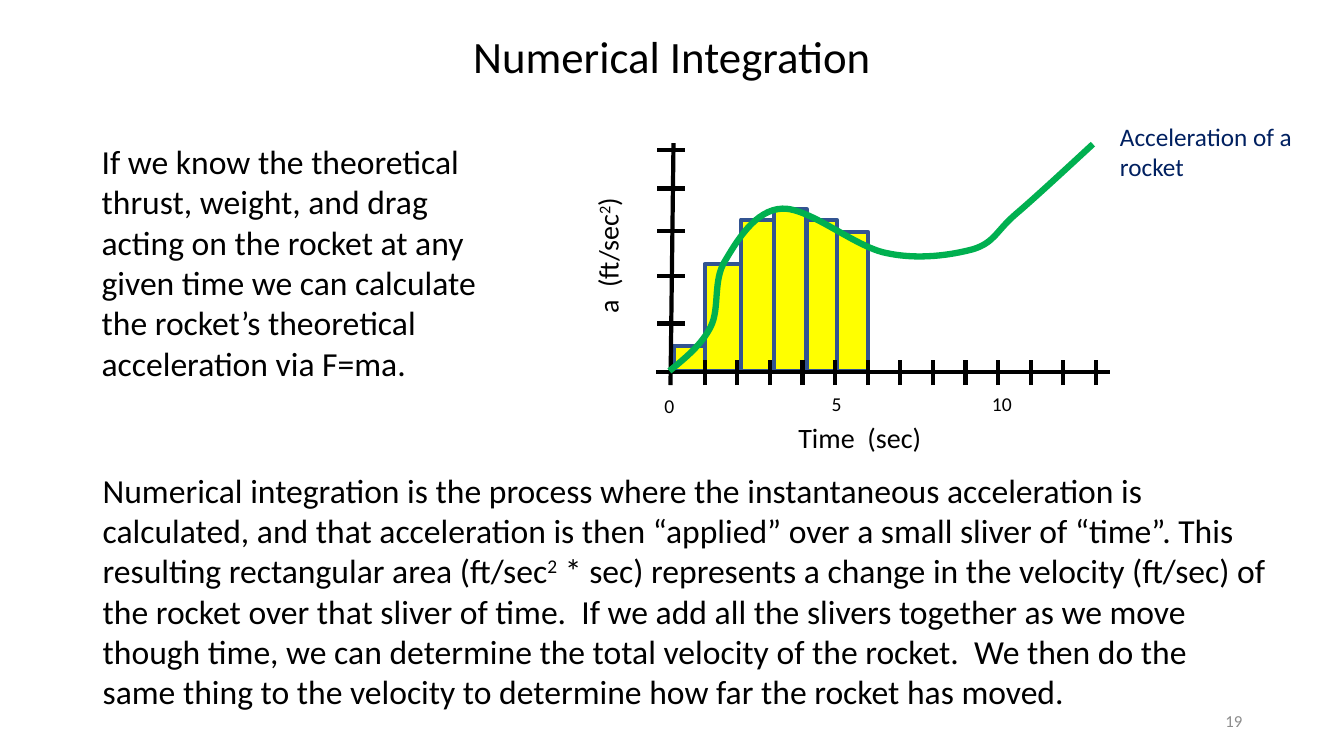
import pptx
import pptx.dml.color
import pptx.enum.shapes
import pptx.enum.text
import pptx.oxml
import pptx.oxml.ns
import pptx.util

# The slide is a fine grid of 1333 columns by 750 rows; all lengths are in cells
CELL = 9144
COLUMNS, ROWS = 1333, 750
FONT = "Calibri"
BLACK, NAVY, GREY = "000000", "002060", "8C8C8C"
YELLOW, BLUE, GREEN = "FFFF00", "325491", "00B050"

THRUST_TEXT = (
    "If we know the theoretical thrust, weight, and drag acting on the rocket "
    "at any given time we can calculate the rocket’s theoretical acceleration via F=ma."
)
BEFORE_SQUARE = (
    "Numerical integration is the process where the instantaneous acceleration is "
    "calculated, and that acceleration is then “applied” over a small sliver of “time”. "
    "This resulting rectangular area (ft/sec"
)
AFTER_SQUARE = (
    " * sec) represents a change in the velocity (ft/sec) of the rocket over that "
    "sliver of time.  If we add all the slivers together as we move though time, we can "
    "determine the total velocity of the rocket.  We then do the same thing to the "
    "velocity to determine how far the rocket has moved."
)

# Slivers: shared edges from left to right, and the top of each
SLIVER_EDGES = [668, 699, 735, 768, 800, 830, 861]
SLIVER_TOPS = [343, 262, 218, 207, 218, 230]
SLIVER_BASE = 368

# Ticks: one per second along the time axis
FIRST_SECOND, LAST_SECOND, SECONDS = 699, 1087, 13
ACCELERATION_TICKS = [149, 187, 229, 274, 321]

# Curve: a start, then two control points and an end for each part
CURVE_START = (664, 368)
CURVE_PARTS = [
    ((680, 355), (696, 342), (705, 324)),
    ((714, 306), (707, 278), (719, 259)),
    ((731, 239), (749, 208), (776, 207)),
    ((803, 206), (848, 245), (879, 251)),
    ((911, 258), (944, 253), (966, 247)),
    ((987, 240), (988, 229), (1008, 212)),
    ((1028, 195), (1071, 155), (1084, 143)),
]


def cells(*counts):
    return [pptx.util.Emu(round(count * CELL)) for count in counts]


def color(hex_value):
    return pptx.dml.color.RGBColor.from_string(hex_value)


def set_line(shape, hex_value, width):
    shape.line.color.rgb = color(hex_value)
    shape.line.width = pptx.util.Pt(width)


def write(frame, runs, size, hex_value, align=None):
    """Fill a frame with runs; a run that starts with ^ is raised."""
    frame.word_wrap = True
    paragraph = frame.paragraphs[0]
    paragraph.alignment = align
    for text in runs:
        run = paragraph.add_run()
        run.text = text.lstrip("^")
        run.font.name = FONT
        run.font.size = pptx.util.Pt(size)
        run.font.color.rgb = color(hex_value)
        if text.startswith("^"):
            run.font._element.set("baseline", "30000")


def add_text(slide, box, runs, size, hex_value=BLACK, align=None, rotation=0):
    label = slide.shapes.add_textbox(*cells(*box))
    label.rotation = rotation
    write(label.text_frame, runs, size, hex_value, align)
    return label


def add_line(slide, start, end):
    line = slide.shapes.add_connector(
        pptx.enum.shapes.MSO_CONNECTOR.STRAIGHT, *cells(*start, *end))
    set_line(line, BLACK, 3)
    line._element.spPr.append(pptx.oxml.parse_xml(
        f"<a:effectLst {pptx.oxml.ns.nsdecls('a')}/>"))


def add_sliver(slide, left, right, top):
    sliver = slide.shapes.add_shape(
        pptx.enum.shapes.MSO_SHAPE.RECTANGLE,
        *cells(left, top, right - left, SLIVER_BASE - top))
    sliver.shadow.inherit = False
    sliver.fill.solid()
    sliver.fill.fore_color.rgb = color(YELLOW)
    set_line(sliver, BLUE, 3)


def add_curve(slide):
    builder = slide.shapes.build_freeform(*CURVE_START, scale=CELL)
    builder.add_line_segments([part[-1] for part in CURVE_PARTS], close=False)
    curve = builder.convert_to_shape()
    curve.shadow.inherit = False
    curve.fill.background()
    set_line(curve, GREEN, 4.5)

    # Bend each straight segment with its control points
    points = [CURVE_START] + [part[-1] for part in CURVE_PARTS]
    left, top = (min(axis) for axis in zip(*points))
    segments = curve._element.xpath(".//a:lnTo")
    for segment, part in zip(segments, CURVE_PARTS):
        bend = "".join(f'<a:pt x="{x - left}" y="{y - top}"/>' for x, y in part)
        segment.getparent().replace(segment, pptx.oxml.parse_xml(
            f"<a:cubicBezTo {pptx.oxml.ns.nsdecls('a')}>{bend}</a:cubicBezTo>"))


def add_graph(slide):
    # Slivers of area
    for left, right, top in zip(SLIVER_EDGES, SLIVER_EDGES[1:], SLIVER_TOPS):
        add_sliver(slide, left, right, top)

    # Axes and ticks
    add_line(slide, (651, 369), (1101, 369))
    add_line(slide, (668, 142), (665, 382))
    for row in ACCELERATION_TICKS:
        add_line(slide, (679, row), (652, row))
    step = (LAST_SECOND - FIRST_SECOND) / (SECONDS - 1)
    for second in range(SECONDS):
        column = FIRST_SECOND + second * step
        add_line(slide, (column, 382), (column, 357))

    # Labels
    for value, left, top in (("0", 649, 386), ("5", 815, 384), ("10", 974, 384)):
        add_text(slide, (left, top, 66, 34), [value], 14)
    add_text(slide, (493, 189, 220, 44), ["a  (ft/sec", "^2", ")"], 20, rotation=270)
    add_text(slide, (782, 412, 177, 44), ["Time  (sec)"], 20)
    add_text(slide, (1101, 115, 201, 71), ["Acceleration of a rocket"], 18, NAVY)

    add_curve(slide)


def main():
    deck = pptx.Presentation()
    deck.slide_width, deck.slide_height = cells(COLUMNS, ROWS)
    slide = deck.slides.add_slide(deck.slide_layouts[5])

    # Title
    title = slide.shapes.title
    title.left, title.top, title.width, title.height = cells(247, 23, 839, 64)
    title.text_frame.auto_size = pptx.enum.text.MSO_AUTO_SIZE.NONE
    write(title.text_frame, ["Numerical Integration"], 32, BLACK,
          pptx.enum.text.PP_ALIGN.CENTER)

    # Explanations
    add_text(slide, (91, 135, 429, 252), [THRUST_TEXT], 24)
    add_text(slide, (92, 461, 1174, 252), [BEFORE_SQUARE, "^2", AFTER_SQUARE], 24)

    add_graph(slide)

    # Slide number
    number = add_text(slide, (942, 695, 300, 40), ["19"], 12, GREY,
                      pptx.enum.text.PP_ALIGN.RIGHT)
    number.text_frame.vertical_anchor = pptx.enum.text.MSO_ANCHOR.MIDDLE

    deck.save("out.pptx")


if __name__ == "__main__":
    main()
